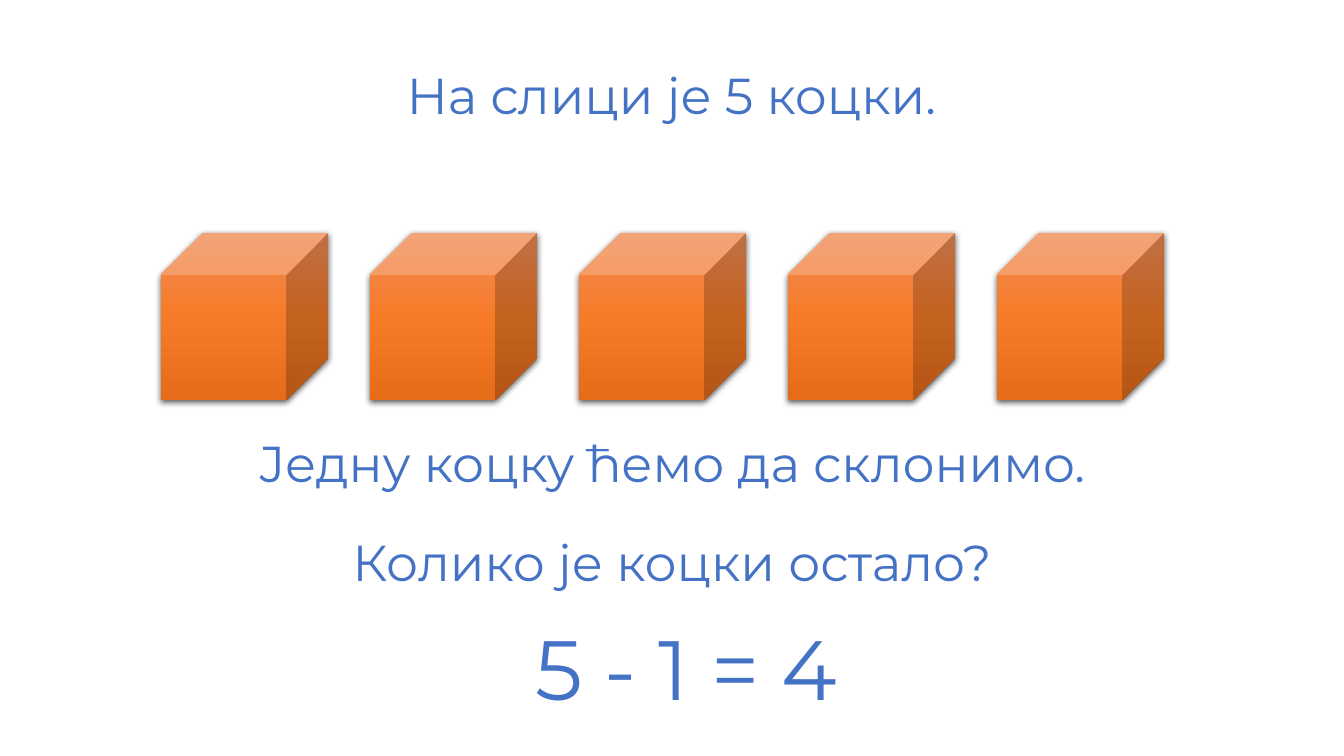
from pptx import Presentation
from pptx.dml.color import RGBColor
from pptx.enum.shapes import MSO_SHAPE as Shape
from pptx.enum.text import MSO_AUTO_SIZE as AutoSize, PP_ALIGN as Align
from pptx.oxml import parse_xml
from pptx.oxml.ns import nsdecls
from pptx.util import Emu, Pt

EMU_PER_PX = 914400 / 100.8
FONT = "Montserrat"
COLORS = {
    "text": "4472C4",
    "outline": "FFFFFF",
    "cube_top": "F18C57",
    "cube_middle": "F67B28",
    "cube_bottom": "E56C19",
    "shadow": "000000",
}
SENTENCES = [
    ("На слици је 5 коцки.", 271, 59, 801, 72, 36),
    ("Једну коцку ћемо да склонимо.", 212, 427, 920, 72, 36),
    ("Колико је коцки остало?", 212, 526, 920, 72, 36),
    ("5 - 1 = 4", 226, 612, 920, 112, 60),
]
CUBE_COUNT = 5
CUBE_LEFT, CUBE_TOP, CUBE_SIZE, CUBE_STEP = 161, 233, 167, 209


def px(length):
    return Emu(round(length * EMU_PER_PX))


def solid_color(name):
    return f'<a:srgbClr val="{COLORS[name]}"/>'


def add_sentence(slide, text, left, top, width, height, size):
    box = slide.shapes.add_textbox(px(left), px(top), px(width), px(height))
    frame = box.text_frame
    frame.word_wrap = True
    frame.auto_size = AutoSize.SHAPE_TO_FIT_TEXT
    paragraph = frame.paragraphs[0]
    paragraph.alignment = Align.CENTER
    run = paragraph.add_run()
    run.text = text
    run.font.name = FONT
    run.font.size = Pt(size)
    run.font.color.rgb = RGBColor.from_string(COLORS["text"])
    run.font._element.insert(0, parse_xml(
        f'<a:ln {nsdecls("a")} w="{Pt(0.75)}"><a:solidFill>'
        f'{solid_color("outline")}</a:solidFill></a:ln>'))


def add_cube(slide, left, top, size):
    cube = slide.shapes.add_shape(Shape.CUBE, px(left), px(top), px(size), px(size))
    properties = cube._element.spPr
    stops = "".join(
        f'<a:gs pos="{position * 1000}">{solid_color(name)}</a:gs>'
        for position, name in ((0, "cube_top"), (50, "cube_middle"), (100, "cube_bottom")))
    properties.append(parse_xml(
        f'<a:gradFill {nsdecls("a")}><a:gsLst>{stops}</a:gsLst>'
        '<a:lin ang="5400000" scaled="0"/></a:gradFill>'))
    cube.line.fill.background()
    properties.append(parse_xml(
        f'<a:effectLst {nsdecls("a")}>'
        f'<a:outerShdw blurRad="{Pt(4.5)}" dist="{Pt(1.5)}" dir="5400000" '
        f'algn="ctr" rotWithShape="0"><a:srgbClr val="{COLORS["shadow"]}">'
        '<a:alpha val="63000"/></a:srgbClr></a:outerShdw></a:effectLst>'))


def main():
    presentation = Presentation()
    presentation.slide_width = px(1344)
    presentation.slide_height = px(756)
    slide = presentation.slides.add_slide(presentation.slide_layouts[6])
    for index in range(CUBE_COUNT):
        add_cube(slide, CUBE_LEFT + index * CUBE_STEP, CUBE_TOP, CUBE_SIZE)
    for sentence in SENTENCES:
        add_sentence(slide, *sentence)
    presentation.save("out.pptx")


if __name__ == "__main__":
    main()
